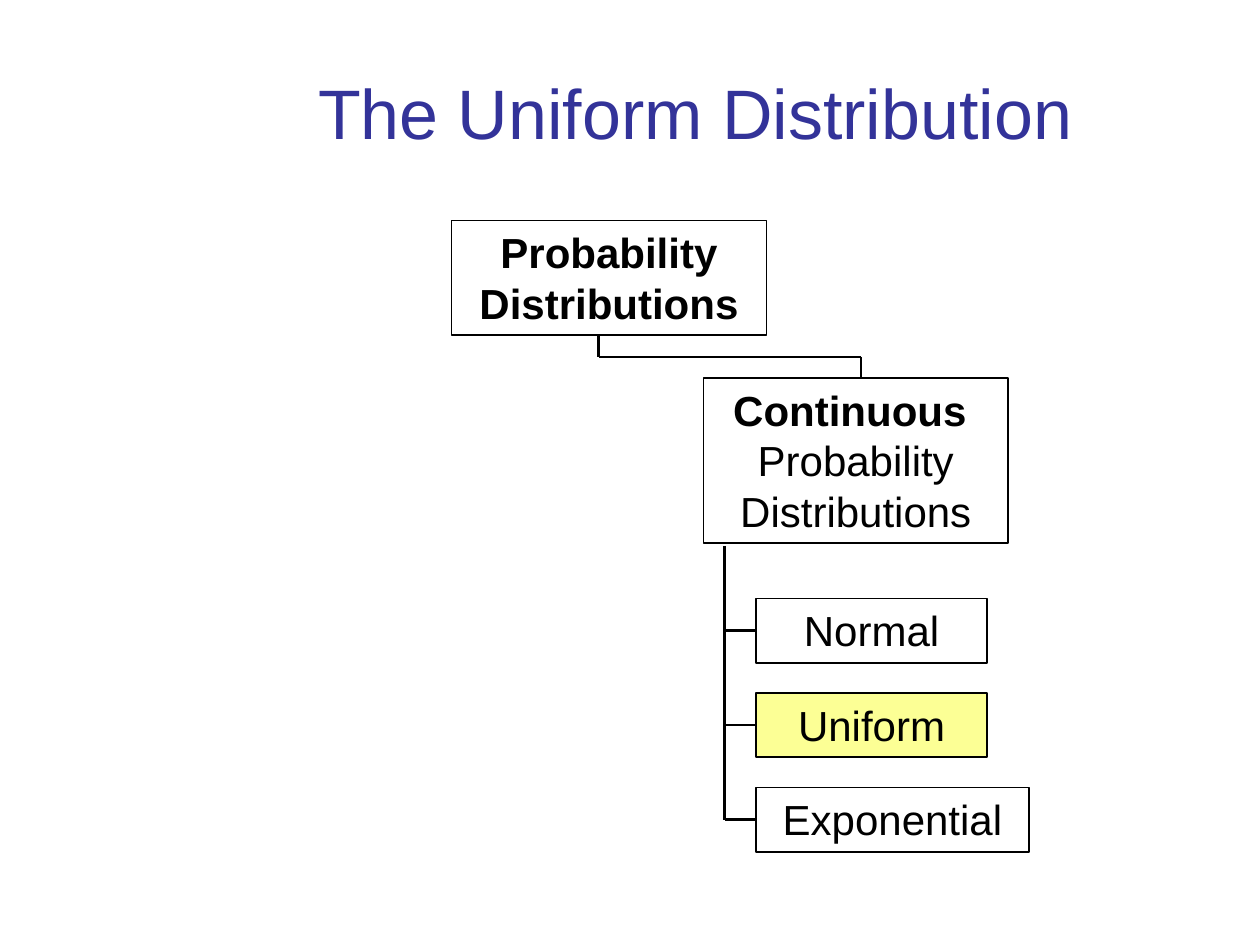
from lxml.etree import SubElement
from pptx import Presentation
from pptx.dml.color import RGBColor
from pptx.enum.shapes import MSO_CONNECTOR, MSO_SHAPE
from pptx.enum.text import MSO_ANCHOR, MSO_AUTO_SIZE, PP_ALIGN
from pptx.oxml.ns import qn
from pptx.util import Inches, Pt

# The slide is a grid of 120 columns by 90 rows, twelve to the inch.
COLS, ROWS = 120, 90
COLORS = {"title": "333399", "ink": "000000", "highlight": "FCFF95"}
TITLE_FONT = {"name": "Arial", "size": Pt(40), "bold": False}
BODY_FONT = {"name": "Arial", "size": Pt(24), "bold": False}
HEAD_FONT = {**BODY_FONT, "bold": True}
FRAME = {
    "word_wrap": True,
    "auto_size": MSO_AUTO_SIZE.SHAPE_TO_FIT_TEXT,
    "vertical_anchor": MSO_ANCHOR.TOP,
}


def grid(*units):
    return [Inches(u / 12) for u in units]


def set_all(target, values):
    for name, value in values.items():
        setattr(target, name, value)


def write(sp, lines, color="ink"):
    """Fill a shape with centred paragraphs given as (text, font) pairs."""
    tf = sp.text_frame
    set_all(tf, FRAME)
    for i, (text, font) in enumerate(lines):
        p = tf.add_paragraph() if i else tf.paragraphs[0]
        p.alignment = PP_ALIGN.CENTER
        r = p.add_run()
        r.text = text
        set_all(r.font, font)
        r.font.color.rgb = RGBColor.from_string(COLORS[color])


def add_box(s, box, lines, fill=None):
    sp = s.shapes.add_shape(MSO_SHAPE.RECTANGLE, *grid(*box))
    sp.shadow.inherit = False
    if fill:
        sp.fill.solid()
        sp.fill.fore_color.rgb = RGBColor.from_string(COLORS[fill])
    else:
        sp.fill.background()
    sp.line.color.rgb = RGBColor.from_string(COLORS["ink"])
    sp.line.width = Pt(1)
    write(sp, lines)
    return sp


def add_line(s, start, end):
    line = s.shapes.add_connector(MSO_CONNECTOR.STRAIGHT, *grid(*start, *end))
    line.line.color.rgb = RGBColor.from_string(COLORS["ink"])
    line.line.width = Pt(1.5)
    SubElement(line._element.spPr, qn("a:effectLst"))
    return line


def add_title(s, box):
    write(s.shapes.add_textbox(*grid(*box)),
          [("The Uniform Distribution", TITLE_FONT)], "title")


def add_branch(s, box):
    """Step from the parent box down and across to the child box."""
    x, y, w, h = box
    bend = y + h / 2
    points = [(x, y), (x, bend), (x + w, bend), (x + w, y + h)]
    for start, end in zip(points, points[1:]):
        add_line(s, start, end)


def add_leaves(s, box, leaves):
    """Hang equally spaced leaf boxes from a trunk along the left of the box."""
    x, y, w, h = box
    indent, lead, pitch, height = 3, 5, 9, 6.12
    for i, (text, width, fill) in enumerate(leaves):
        top = y + lead + i * pitch
        leaf = add_box(s, (x + indent, top, width, height),
                       [(text, BODY_FONT)], fill)
        middle = top + height / 2
        add_line(s, (x + indent, middle), (x, middle)).begin_connect(leaf, 1)
    add_line(s, (x, y), (x, y + h))


def main():
    prs = Presentation()
    prs.slide_width, prs.slide_height = grid(COLS, ROWS)
    s = prs.slides.add_slide(prs.slide_layouts[6])
    add_title(s, (20, 6, 92.4, 9.1))
    add_branch(s, (57, 32, 25, 4))
    add_box(s, (43, 21, 30, 10.9), [("Probability Distributions", HEAD_FONT)])
    add_box(s, (67, 36, 29, 15.7), [("Continuous ", HEAD_FONT),
                                    ("Probability Distributions", BODY_FONT)])
    add_leaves(s, (69, 52, 29, 26.06), [("Normal", 22, None),
                                        ("Uniform", 22, "highlight"),
                                        ("Exponential", 26, None)])
    prs.save("out.pptx")


if __name__ == "__main__":
    main()
